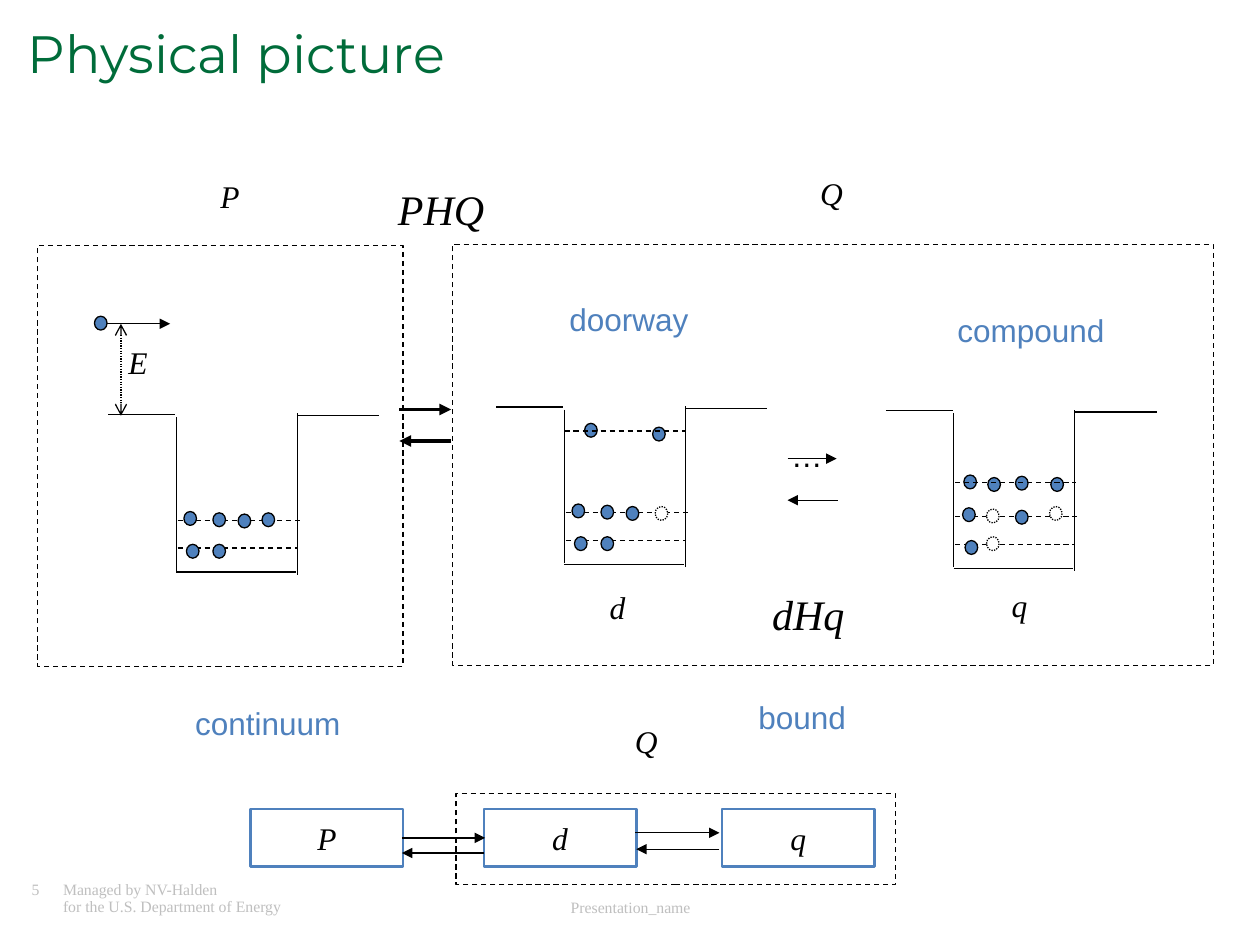
from dataclasses import dataclass

from lxml import etree
from pptx import Presentation
from pptx import util as u
from pptx.dml.color import RGBColor
from pptx.enum import dml, shapes, text
from pptx.oxml.ns import qn

SCALE = 9144  # EMU in one px, at 100 px to the inch


@dataclass(frozen=True)
class Theme:
    ink: str = "000000"
    paper: str = "FFFFFF"
    accent: str = "4F81BD"
    heading: str = "006C3A"
    muted: str = "BFBFBF"
    serif: str = "Times New Roman"
    sans: str = "Arial"
    display: str = "Montserrat"
    small: int = 9
    body: int = 18
    large: int = 24
    title: int = 30
    thin: float = 0.75
    medium: float = 1.5
    thick: float = 2.25


THEME = Theme()
DASH = dml.MSO_LINE.DASH
DOT = dml.MSO_LINE.ROUND_DOT
LEFT, CENTER = text.PP_ALIGN.LEFT, text.PP_ALIGN.CENTER
SYMBOL = {"name": THEME.serif, "size": THEME.body, "italic": True, "color": THEME.ink}
MATRIX = {**SYMBOL, "size": THEME.large}
CAPTION = {"name": THEME.sans, "size": THEME.body, "color": THEME.accent}
ELLIPSIS = {**CAPTION, "color": THEME.ink}
FOOTER = {"name": THEME.serif, "size": THEME.small, "color": THEME.muted}
HEADING = {"name": THEME.display, "size": THEME.title, "color": THEME.heading}


def px(*values):
    return [u.Emu(value * SCALE) for value in values]


class Painter:
    """Draws styled elements on the current page."""

    def __init__(self, page, theme):
        self.page = page
        self.theme = theme

    def add_span(self, para, words, style):
        span = para.add_run()
        span.text = words
        for key, value in style.items():
            if key == "color":
                span.font.color.rgb = RGBColor.from_string(value)
            else:
                setattr(span.font, key, u.Pt(value) if key == "size" else value)

    def outline(self, line, color, width, dash=None):
        line.color.rgb = RGBColor.from_string(color)
        line.width = u.Pt(width)
        if dash:
            line.dash_style = dash

    def title(self, words, left, top, width, height):
        box = self.page.shapes.title
        box.left, box.top, box.width, box.height = px(left, top, width, height)
        box.text_frame.vertical_anchor = text.MSO_ANCHOR.TOP
        para = box.text_frame.paragraphs[0]
        para.alignment, para.line_spacing = LEFT, 0.85
        self.add_span(para, words, HEADING)

    def label(self, words, left, top, width, height, style, wrap=False, align=LEFT):
        box = self.page.shapes.add_textbox(*px(left, top, width, height))
        box.text_frame.word_wrap = wrap
        para = box.text_frame.paragraphs[0]
        para.alignment = align
        self.add_span(para, words, style)

    def tabbed(self, lines, left, top, width, height, stop):
        frame = self.page.shapes.add_textbox(*px(left, top, width, height)).text_frame
        frame.word_wrap = True
        for side in ("left", "top", "right", "bottom"):
            setattr(frame, f"margin_{side}", 0)
        for index, words in enumerate(lines):
            para = frame.add_paragraph() if index else frame.paragraphs[0]
            para.line_spacing = 0.9
            tabs = etree.SubElement(para._p.get_or_add_pPr(), qn("a:tabLst"))
            etree.SubElement(tabs, qn("a:tab"), pos=str(stop * SCALE), algn="l")
            self.add_span(para, words, FOOTER)

    def shape(self, kind, left, top, width, height, fill, color, line_width, dash=None):
        shape = self.page.shapes.add_shape(kind, *px(left, top, width, height))
        shape.shadow.inherit = False
        shape.fill.solid()
        shape.fill.fore_color.rgb = RGBColor.from_string(fill)
        self.outline(shape.line, color, line_width, dash)
        return shape

    def region(self, left, top, width, height):
        self.shape(shapes.MSO_SHAPE.RECTANGLE, left, top, width, height,
                   self.theme.paper, self.theme.ink, self.theme.thin, DASH)

    def block(self, words, left, top, width, height):
        block = self.shape(shapes.MSO_SHAPE.RECTANGLE, left, top, width, height,
                           self.theme.paper, self.theme.accent, self.theme.medium)
        block.text_frame.word_wrap = False
        block.text_frame.vertical_anchor = text.MSO_ANCHOR.MIDDLE
        para = block.text_frame.paragraphs[0]
        para.alignment = CENTER
        self.add_span(para, words, SYMBOL)

    def nucleon(self, left, top, hole=False):
        fill, dash = (self.theme.paper, DOT) if hole else (self.theme.accent, None)
        self.shape(shapes.MSO_SHAPE.OVAL, left, top, 10, 11,
                   fill, self.theme.ink, self.theme.thin, dash)

    def line(self, x1, y1, x2, y2, dash=None, head=None, tail=None, width=THEME.thin):
        line = self.page.shapes.add_connector(
            shapes.MSO_CONNECTOR.STRAIGHT, *px(x1, y1, x2, y2))
        self.outline(line.line, self.theme.ink, width, dash)
        stroke = line.line._get_or_add_ln()
        for end, arrow in (("headEnd", head), ("tailEnd", tail)):
            if arrow:
                etree.SubElement(stroke, qn(f"a:{end}"), type=arrow)
        etree.SubElement(line._element.spPr, qn("a:effectLst"))

    def arrow(self, x1, y1, x2, y2, width=THEME.thin):
        self.line(x1, y1, x2, y2, tail="triangle", width=width)

    def well(self, x, y):
        """Potential well; x is its left wall and y its left rim."""
        for x1, y1, x2, y2 in ((-54, 0, -1, 0), (0, 2, 0, 124), (0, 125, 95, 125),
                               (96, 127, 96, -1), (96, 1, 161, 1)):
            self.line(x + x1, y + y1, x + x2, y + y2)
        for depth, end in ((106, 96), (84, 98)):
            self.line(x + 1, y + depth, x + end, y + depth, DASH)


def main():
    deck = Presentation()
    deck.slide_width, deck.slide_height = px(1000, 750)
    page = deck.slides.add_slide(deck.slide_layouts[5])
    paint = Painter(page, THEME)

    # Title and footer
    paint.title("Physical picture", 12, 19, 900, 53)
    paint.tabbed(("5\tManaged by NV-Halden", "\tfor the U.S. Department of Energy"),
                 25, 700, 308, 33, stop=25)
    paint.label("Presentation_name", 342, 708, 317, 20, FOOTER, True, CENTER)

    # Continuum space P and bound space Q
    paint.region(30, 195, 290, 334)
    paint.region(359, 194, 604, 334)

    # Potential wells
    for x, y in ((140, 329), (448, 323), (757, 326)):
        paint.well(x, y)

    # Nucleons, then the holes they leave
    nucleons = (
        (75, 251), (148, 432), (169, 432), (146, 406), (169, 407), (189, 408), (208, 407),
        (456, 426), (477, 426), (454, 400), (477, 401), (497, 402), (518, 339), (464, 336),
        (766, 429), (806, 378), (764, 403), (784, 379), (806, 405), (834, 379), (765, 377),
    )
    for left, top in nucleons:
        paint.nucleon(left, top)
    for left, top in ((520, 402), (783, 404), (833, 402), (783, 426)):
        paint.nucleon(left, top, hole=True)

    # Excited levels
    paint.line(448, 342, 544, 342, DASH)
    paint.line(758, 383, 854, 383, DASH)

    # Incoming particle and its energy
    paint.arrow(85, 257, 135, 257)
    paint.line(96, 257, 96, 330, DOT, head="arrow", tail="arrow")

    # Couplings between the spaces
    paint.arrow(317, 325, 358, 325, THEME.thick)
    paint.arrow(358, 350, 317, 350, THEME.thick)
    paint.arrow(625, 364, 664, 364)
    paint.arrow(665, 397, 625, 397)

    # Labels
    for words, left, top, width, height, style in (
        ("E", 92, 267, 35, 40, SYMBOL),
        ("P", 165, 136, 44, 57, SYMBOL),
        ("Q", 641, 133, 48, 57, SYMBOL),
        ("d", 474, 462, 40, 57, SYMBOL),
        ("q", 793, 460, 40, 57, SYMBOL),
        ("Q", 494, 568, 48, 57, SYMBOL),
        ("PHQ", 306, 141, 93, 50, MATRIX),
        ("dHq", 603, 462, 93, 50, MATRIX),
        ("…", 618, 341, 59, 57, ELLIPSIS),
        ("continuum", 145, 554, 135, 40, CAPTION),
        ("bound", 592, 549, 90, 40, CAPTION),
        ("doorway", 442, 233, 116, 40, CAPTION),
        ("compound", 750, 242, 138, 40, CAPTION),
    ):
        paint.label(words, left, top, width, height, style)

    # Block diagram
    paint.region(362, 630, 349, 72)
    for words, left in (("P", 199), ("d", 384), ("q", 573)):
        paint.block(words, left, 642, 121, 46)
    for start, end, y in ((319, 385, 665), (504, 571, 661), (384, 319, 677), (571, 505, 674)):
        paint.arrow(start, y, end, y)

    deck.save("out.pptx")


if __name__ == "__main__":
    main()
